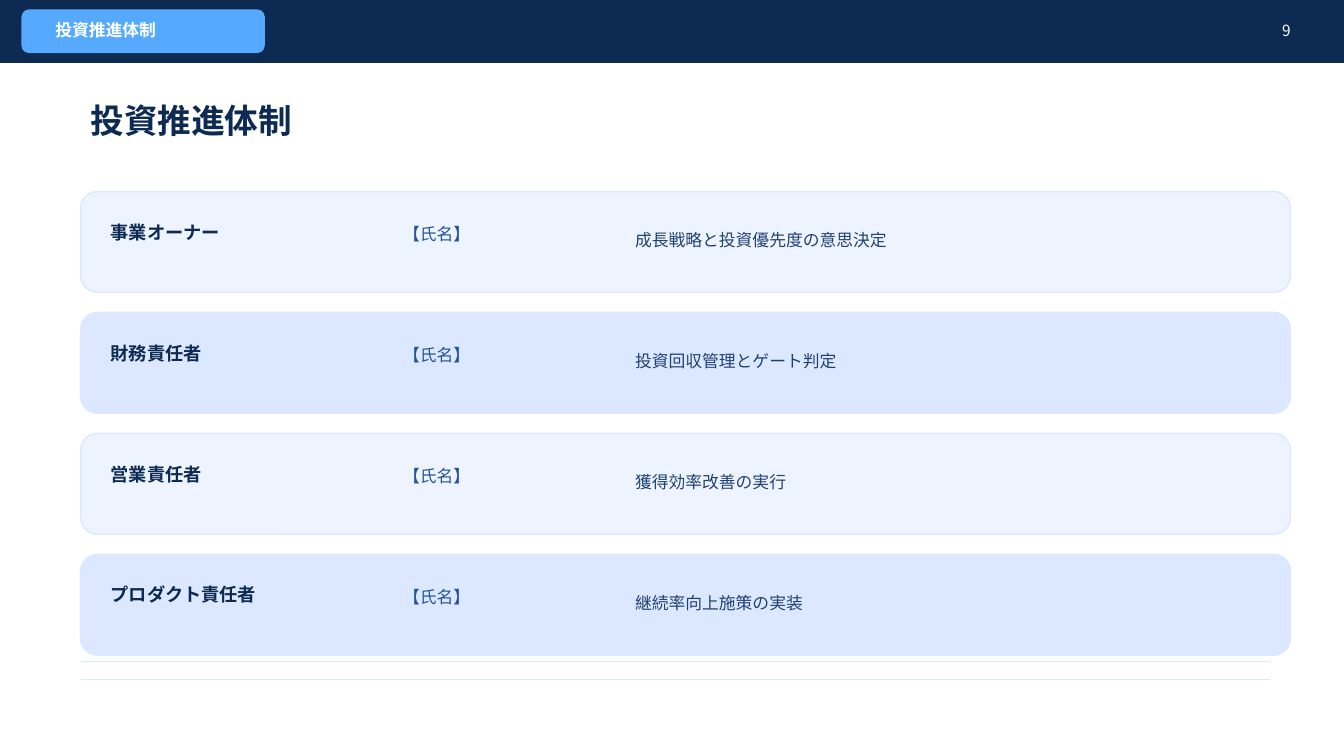
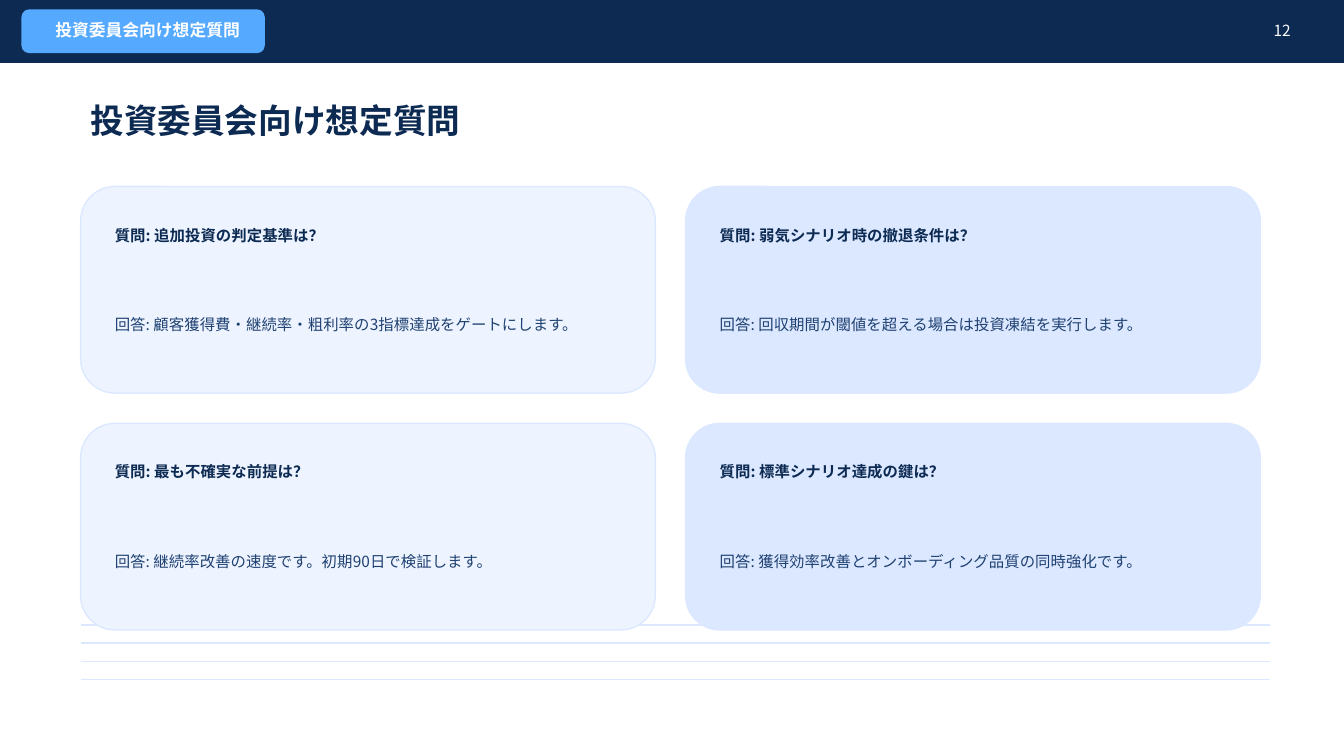
from lxml.etree import SubElement
from pptx import Presentation
from pptx.dml.color import RGBColor
from pptx.enum.shapes import MSO_CONNECTOR, MSO_SHAPE
from pptx.enum.text import MSO_ANCHOR, PP_ALIGN
from pptx.oxml.ns import qn
from pptx.util import Pt

PX = 9144  # EMU in one px, at 100 px to the inch
COLORS = {
    "navy": "0C2A52",
    "sky": "55A9FF",
    "white": "FFFFFF",
    "pale": "EEF4FF",
    "mist": "DCE8FF",
    "blue": "23549A",
    "body": "1F4172",
}
BODY_FONT = "Noto Sans CJK JP"
TITLE_FONT = "Arial Narrow"
CARD_FILLS = ("pale", "mist")

ROLES = [
    ("事業オーナー", "成長戦略と投資優先度の意思決定"),
    ("財務責任者", "投資回収管理とゲート判定"),
    ("営業責任者", "獲得効率改善の実行"),
    ("プロダクト責任者", "継続率向上施策の実装"),
]
QUESTIONS = [
    ("追加投資の判定基準は？", "顧客獲得費・継続率・粗利率の3指標達成をゲートにします。"),
    ("弱気シナリオ時の撤退条件は？", "回収期間が閾値を超える場合は投資凍結を実行します。"),
    ("最も不確実な前提は？", "継続率改善の速度です。初期90日で検証します。"),
    ("標準シナリオ達成の鍵は？", "獲得効率改善とオンボーディング品質の同時強化です。"),
]


def rgb(name):
    return RGBColor.from_string(COLORS[name])


def assign(target, formats):
    for name, value in formats.items():
        setattr(target, name, value)


class Builder:
    """Holds the deck style and the current page."""

    def __init__(self):
        self.deck = Presentation()
        assign(self.deck, {"slide_width": 1333 * PX, "slide_height": 750 * PX})
        self.page = None

    def line(self, left, right, y):
        rule = self.page.shapes.add_connector(
            MSO_CONNECTOR.STRAIGHT, left * PX, y * PX, right * PX, y * PX)
        rule.line.color.rgb = rgb("mist")
        rule.line.width = Pt(1)
        SubElement(rule._element.spPr, qn("a:effectLst"))

    def shape(self, kind, left, top, width, height, fill, outline):
        box = self.page.shapes.add_shape(
            kind, left * PX, top * PX, width * PX, height * PX)
        box.shadow.inherit = False
        box.fill.solid()
        box.fill.fore_color.rgb = rgb(fill)
        box.line.color.rgb = rgb(outline)
        box.line.width = Pt(1)

    def card(self, left, top, width, height, fill, outline="mist"):
        self.shape(MSO_SHAPE.ROUNDED_RECTANGLE,
                   left, top, width, height, fill, outline)

    def text(self, words, left, top, width, height, size, color,
             bold=False, font=BODY_FONT, align=PP_ALIGN.LEFT):
        box = self.page.shapes.add_textbox(
            left * PX, top * PX, width * PX, height * PX)
        assign(box.text_frame, {"word_wrap": True,
                                "vertical_anchor": MSO_ANCHOR.MIDDLE})
        para = box.text_frame.paragraphs[0]
        para.alignment = align
        span = para.add_run()
        span.text = words
        span.font.color.rgb = rgb(color)
        assign(span.font, {"size": Pt(size), "bold": bold, "name": font})
        # East Asian characters take the same typeface
        SubElement(span.font._element, qn("a:ea"), typeface=font)

    def start_page(self, title, number):
        self.page = self.deck.slides.add_slide(self.deck.slide_layouts[6])
        # Footer rules
        for index in range(4):
            self.line(80, 1260, 620 + 18 * index)
        # Header band with tab and page number
        self.shape(MSO_SHAPE.RECTANGLE, 0, 0, 1333, 62, "navy", "navy")
        self.card(22, 10, 240, 42, "sky", "sky")
        self.text(title, 45, 18, 880, 24, 12, "white", bold=True)
        self.text(str(number), 1215, 18, 75, 24, 11, "white",
                  align=PP_ALIGN.RIGHT)
        # Title
        self.text(title, 80, 95, 1140, 48, 24, "navy", bold=True,
                  font=TITLE_FONT)


def build_roles(builder):
    builder.start_page("投資推進体制", 9)
    for index, (role, duty) in enumerate(ROLES):
        top = 190 + 120 * index
        builder.card(80, top, 1200, 100, CARD_FILLS[index % 2])
        builder.text(role, 100, top + 28, 270, 24, 13, "navy", bold=True)
        builder.text("【氏名】", 390, top + 30, 210, 24, 12, "blue")
        builder.text(duty, 620, top + 25, 620, 45, 12, "body")


def build_questions(builder):
    builder.start_page("投資委員会向け想定質問", 12)
    for index, (question, answer) in enumerate(QUESTIONS):
        row, column = divmod(index, 2)
        left, top = 80 + 600 * column, 185 + 235 * row
        builder.card(left, top, 570, 205, CARD_FILLS[column])
        builder.text(f"質問: {question}", left + 24, top + 24, 520, 48,
                     11, "navy", bold=True)
        builder.text(f"回答: {answer}", left + 24, top + 82, 520, 110,
                     11, "body")


def main():
    builder = Builder()
    build_roles(builder)
    build_questions(builder)
    builder.deck.save("out.pptx")


if __name__ == "__main__":
    main()
